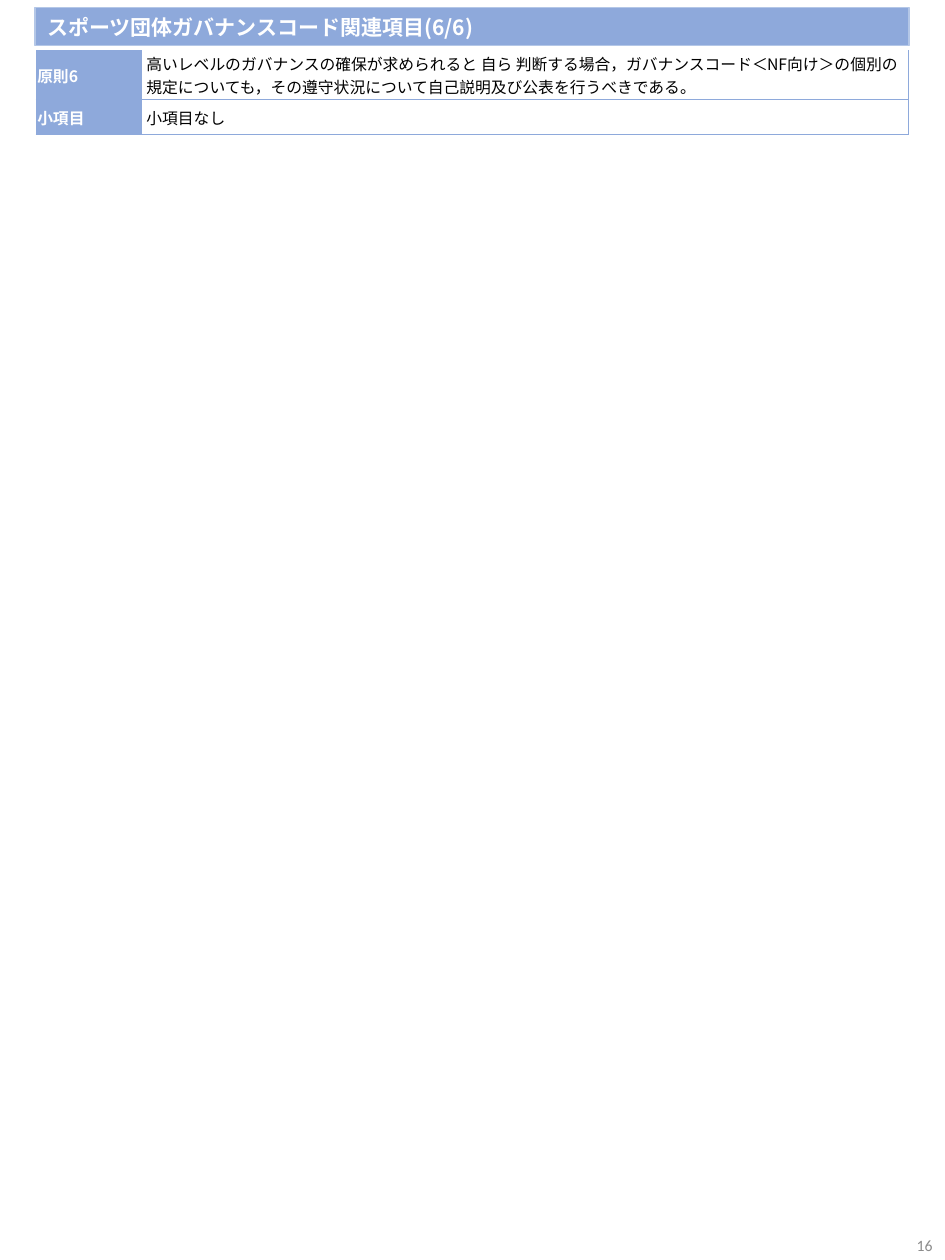
from lxml.etree import SubElement
from pptx import Presentation
from pptx.dml.color import RGBColor
from pptx.enum.shapes import MSO_SHAPE
from pptx.enum.text import MSO_ANCHOR as Anchor, MSO_AUTO_SIZE as AutoSize, PP_ALIGN as Align
from pptx.oxml.ns import qn
from pptx.util import Pt

COLORS = {"header": "8EA9DB", "outline": "B4C7E7", "white": "FFFFFF", "black": "000000", "gray": "8C8C8C"}
JAPANESE = "Noto Sans CJK JP"
TITLE = "スポーツ団体ガバナンスコード関連項目(6/6)"
ROWS = [
    ("原則6", "高いレベルのガバナンスの確保が求められると 自ら 判断する場合，ガバナンスコード＜NF向け＞の"
     "個別の規定についても，その遵守状況について自己説明及び公表を行うべきである。"),
    ("小項目", "小項目なし"),
]
COLUMN_WIDTHS = (39.8, 20.4, 438.6)
ROW_HEIGHTS = (28.1, 20.2)
ROW_BORDERS = ("LRB", "LRTB")


def color(name):
    """Return the named palette color."""
    return RGBColor.from_string(COLORS[name])


def apply_format(target, values):
    """Set every attribute in values on target."""
    for name, value in values.items():
        setattr(target, name, value)


def write_text(frame, text, size, color_name, bold=False, font=JAPANESE, align=Align.LEFT):
    """Write one formatted paragraph into a text frame."""
    paragraph = frame.paragraphs[0]
    paragraph.alignment = align
    run = paragraph.add_run()
    run.text = text
    apply_format(run.font, {"size": Pt(size), "bold": bold, "name": font})
    run.font.color.rgb = color(color_name)
    SubElement(run.font._element, qn("a:ea"), typeface=font)


def add_title(slide):
    """Add the filled title bar."""
    shape = slide.shapes.add_shape(MSO_SHAPE.RECTANGLE, Pt(20), Pt(4.5), Pt(499.5), Pt(21.5))
    shape.shadow.inherit = False
    shape.fill.solid()
    shape.fill.fore_color.rgb = color("header")
    shape.line.color.rgb = color("outline")
    shape.line.width = Pt(0.75)
    apply_format(shape.text_frame, {
        "word_wrap": True, "auto_size": AutoSize.SHAPE_TO_FIT_TEXT, "vertical_anchor": Anchor.MIDDLE,
        "margin_top": Pt(2), "margin_bottom": Pt(2)})
    write_text(shape.text_frame, TITLE, 12, "white", bold=True)


def add_page_number(slide, number):
    """Add the page number in the bottom right corner."""
    box = slide.shapes.add_textbox(Pt(500.4), Pt(697), Pt(39.6), Pt(23.5))
    apply_format(box.text_frame, {"word_wrap": True, "vertical_anchor": Anchor.BOTTOM})
    write_text(box.text_frame, number, 9, "gray", font="Calibri", align=Align.RIGHT)


def set_borders(cell, sides):
    """Draw thin lines on the given sides of a cell and none elsewhere."""
    properties = cell._tc.get_or_add_tcPr()
    for index, side in enumerate("LRTB"):
        line = SubElement(properties, qn(f"a:ln{side}"), w=str(Pt(0.5)))
        if side in sides:
            fill = SubElement(line, qn("a:solidFill"))
            SubElement(fill, qn("a:srgbClr"), val=COLORS["header"])
        else:
            SubElement(line, qn("a:noFill"))
        properties.remove(line)
        properties.insert(index, line)


def fill_cell(cell, text, is_label, left_margin, sides):
    """Format one table cell and write its text."""
    apply_format(cell, {
        "vertical_anchor": Anchor.MIDDLE, "margin_left": Pt(left_margin), "margin_right": Pt(0.7),
        "margin_top": Pt(0.7), "margin_bottom": Pt(0)})
    if is_label:
        cell.fill.solid()
        cell.fill.fore_color.rgb = color("header")
    else:
        cell.fill.background()
    if text:
        write_text(cell.text_frame, text, 9, "white" if is_label else "black", bold=is_label)
    else:
        cell.text_frame.paragraphs[0].font.size = Pt(9)
    set_borders(cell, sides)


def add_principle_table(slide):
    """Add the table with the principle and its sub-items."""
    frame = slide.shapes.add_table(
        len(ROWS), len(COLUMN_WIDTHS), Pt(20.6), Pt(28.7), Pt(sum(COLUMN_WIDTHS)), Pt(sum(ROW_HEIGHTS)))
    table = frame.table
    apply_format(table, {"first_row": False, "horz_banding": False})
    for column, width in zip(table.columns, COLUMN_WIDTHS):
        column.width = Pt(width)
    for row, height, (label, body), sides in zip(table.rows, ROW_HEIGHTS, ROWS, ROW_BORDERS):
        row.height = Pt(height)
        label_cell, spacer_cell, body_cell = row.cells
        fill_cell(label_cell, label, True, 0.7, sides)
        fill_cell(spacer_cell, "", True, 0.7, sides)
        fill_cell(body_cell, body, False, 2.9, sides)


def main():
    """Build and save the slide."""
    presentation = Presentation()
    apply_format(presentation, {"slide_width": Pt(540), "slide_height": Pt(720)})
    slide = presentation.slides.add_slide(presentation.slide_layouts[6])
    add_title(slide)
    add_page_number(slide, "16")
    add_principle_table(slide)
    presentation.save("out.pptx")


if __name__ == "__main__":
    main()
